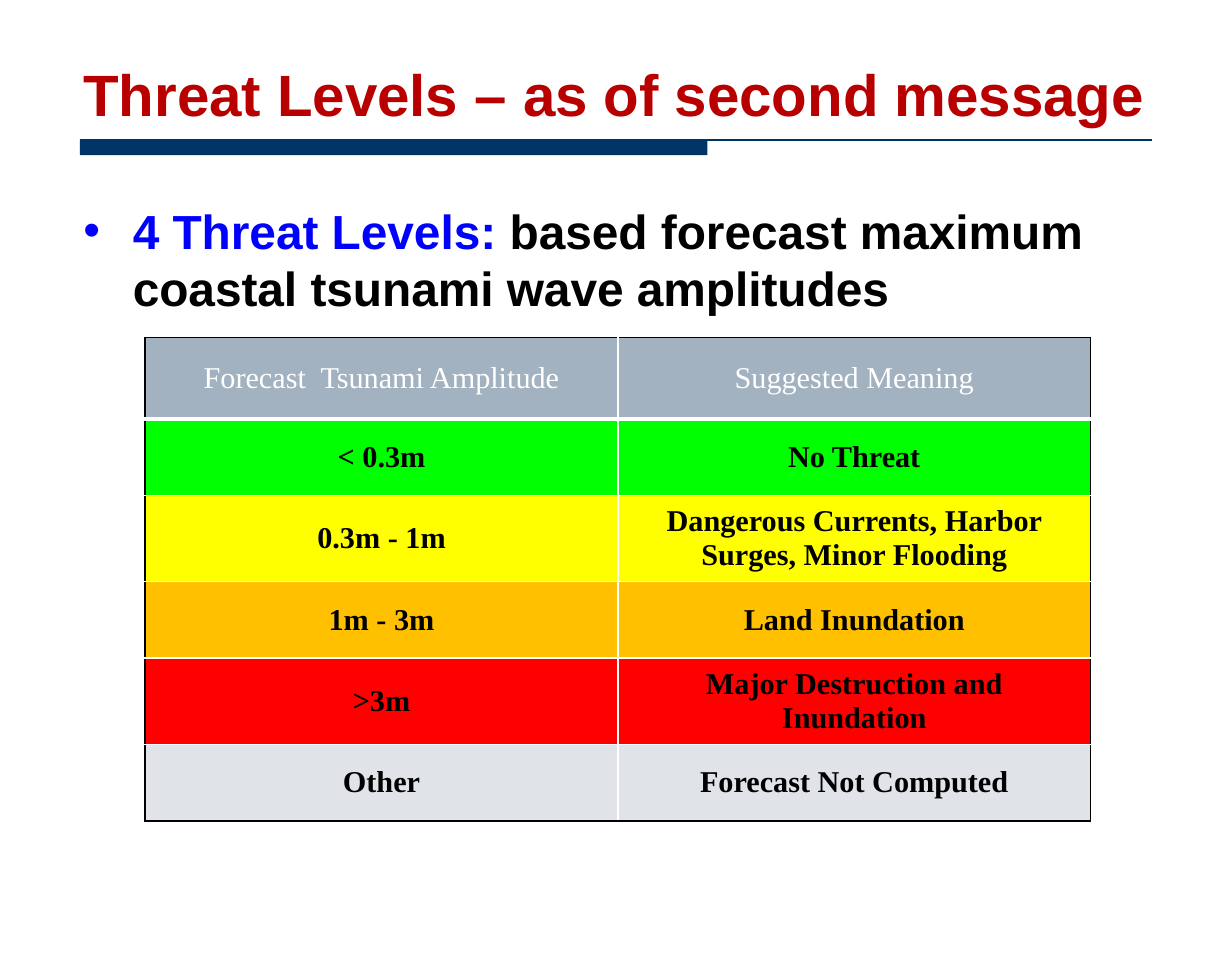
"""Build the tsunami threat levels slide."""
from lxml.etree import SubElement as Sub
from pptx import Presentation
from pptx.dml.color import RGBColor
from pptx.enum.shapes import MSO_CONNECTOR as Link, MSO_SHAPE as Shape
from pptx.enum.text import MSO_ANCHOR as Anchor, PP_ALIGN as Align
from pptx.oxml.ns import qn
from pptx.util import Cm, Pt

NAVY = RGBColor(0x00, 0x33, 0x66)
CRIMSON = RGBColor(0xB9, 0x00, 0x00)
BLUE = RGBColor(0x00, 0x00, 0xFF)
BLACK = RGBColor(0x00, 0x00, 0x00)
WHITE = RGBColor(0xFF, 0xFF, 0xFF)
SLATE = RGBColor(0xA3, 0xB2, 0xC1)
GREEN = RGBColor(0x00, 0xFF, 0x00)
YELLOW = RGBColor(0xFF, 0xFF, 0x00)
ORANGE = RGBColor(0xFF, 0xC0, 0x00)
RED = RGBColor(0xFF, 0x00, 0x00)
PALE = RGBColor(0xE0, 0xE4, 0xE9)


def add_run(para, text, size, color, bold=True, font="Arial"):
    run = para.add_run()
    run.text = text
    run.font.name = font
    run.font.size = Pt(size)
    run.font.bold = bold
    run.font.color.rgb = color


def add_edge(cell, side, color, width):
    line = Sub(cell._tc.get_or_add_tcPr(), qn(f"a:ln{side}"), w=str(Pt(width)))
    Sub(Sub(line, qn("a:solidFill")), qn("a:srgbClr"), val=str(color))


deck = Presentation()
deck.slide_width = Cm(25.88)
deck.slide_height = Cm(20.32)
slide = deck.slides.add_slide(deck.slide_layouts[6])
shapes = slide.shapes

bar = shapes.add_shape(Shape.RECTANGLE, Cm(1.68), Cm(2.94), Cm(13.18), Cm(0.32))
bar.shadow.inherit = False
bar.fill.solid()
bar.fill.fore_color.rgb = NAVY
bar.line.fill.background()

rule = shapes.add_connector(Link.STRAIGHT, Cm(1.68), Cm(2.94), Cm(24.2), Cm(2.94))
rule.line.color.rgb = NAVY
rule.line.width = Pt(0.75)
Sub(rule._element.spPr, qn("a:effectLst"))

body = shapes.add_textbox(Cm(1.5), Cm(4.11), Cm(22.66), Cm(2.69)).text_frame
body.word_wrap = True
para = body.paragraphs[0]
para.space_before = Pt(4.1)
props = para._p.get_or_add_pPr()
props.set("marL", str(Cm(1.04)))
props.set("indent", str(-Cm(1.04)))
Sub(props, qn("a:buFont"), typeface="Arial")
Sub(props, qn("a:buChar"), char="•")
add_run(para, "4 Threat Levels: ", 28.5, BLUE)
add_run(para, "based forecast maximum coastal tsunami wave amplitudes", 28.5, BLACK)

title = shapes.add_textbox(Cm(1.5), Cm(1.09), Cm(23.32), Cm(1.75)).text_frame
title.word_wrap = True
add_run(title.paragraphs[0], "Threat Levels – as of second message", 34.7, CRIMSON)

levels = [
    ("Forecast  Tsunami Amplitude", "Suggested Meaning", SLATE, 1.71),
    ("< 0.3m", "No Threat", GREEN, 1.61),
    ("0.3m - 1m", "Dangerous Currents, Harbor Surges, Minor Flooding", YELLOW, 1.81),
    ("1m - 3m", "Land Inundation", ORANGE, 1.61),
    (">3m", "Major Destruction and Inundation", RED, 1.81),
    ("Other", "Forecast Not Computed", PALE, 1.61),
]
last = len(levels) - 1
grid = shapes.add_table(len(levels), 2, Cm(3.05), Cm(7.09), Cm(19.86), Cm(10.16)).table

for row, (wave, sense, color, height) in enumerate(levels):
    grid.rows[row].height = Cm(height)
    head = row == 0
    for col, text in enumerate((wave, sense)):
        cell = grid.cell(row, col)
        add_edge(cell, "L", WHITE if col else BLACK, 1)
        add_edge(cell, "R", BLACK if col else WHITE, 1)
        add_edge(cell, "T", BLACK if head else WHITE, 3 if row == 1 else 1)
        add_edge(cell, "B", BLACK if row == last else WHITE, 3 if head else 1)
        cell.fill.solid()
        cell.fill.fore_color.rgb = color
        cell.vertical_anchor = Anchor.MIDDLE
        para = cell.text_frame.paragraphs[0]
        para.alignment = Align.CENTER
        ink = WHITE if head else BLACK
        add_run(para, text, 18, ink, not head, "Times New Roman")

deck.save("out.pptx")
